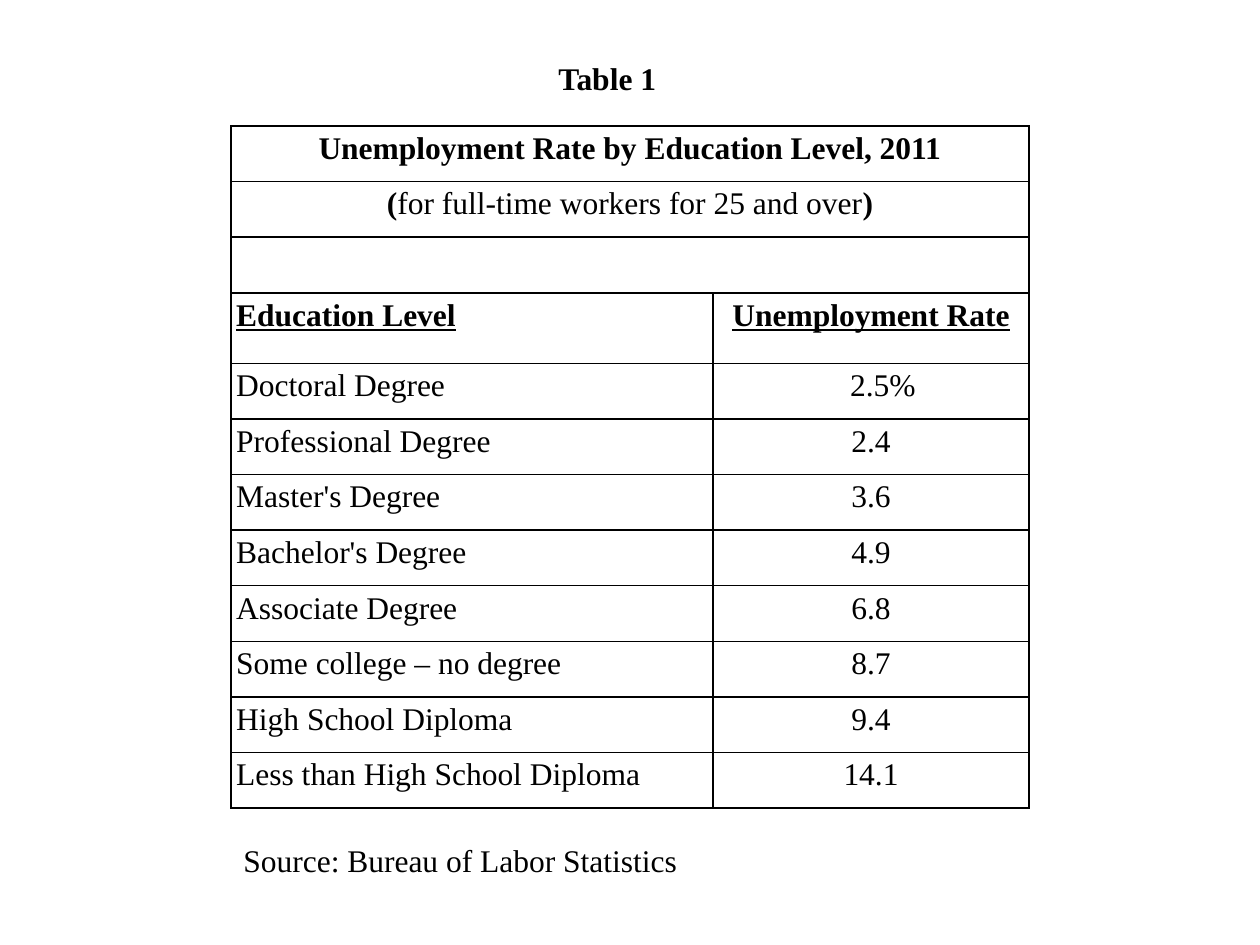
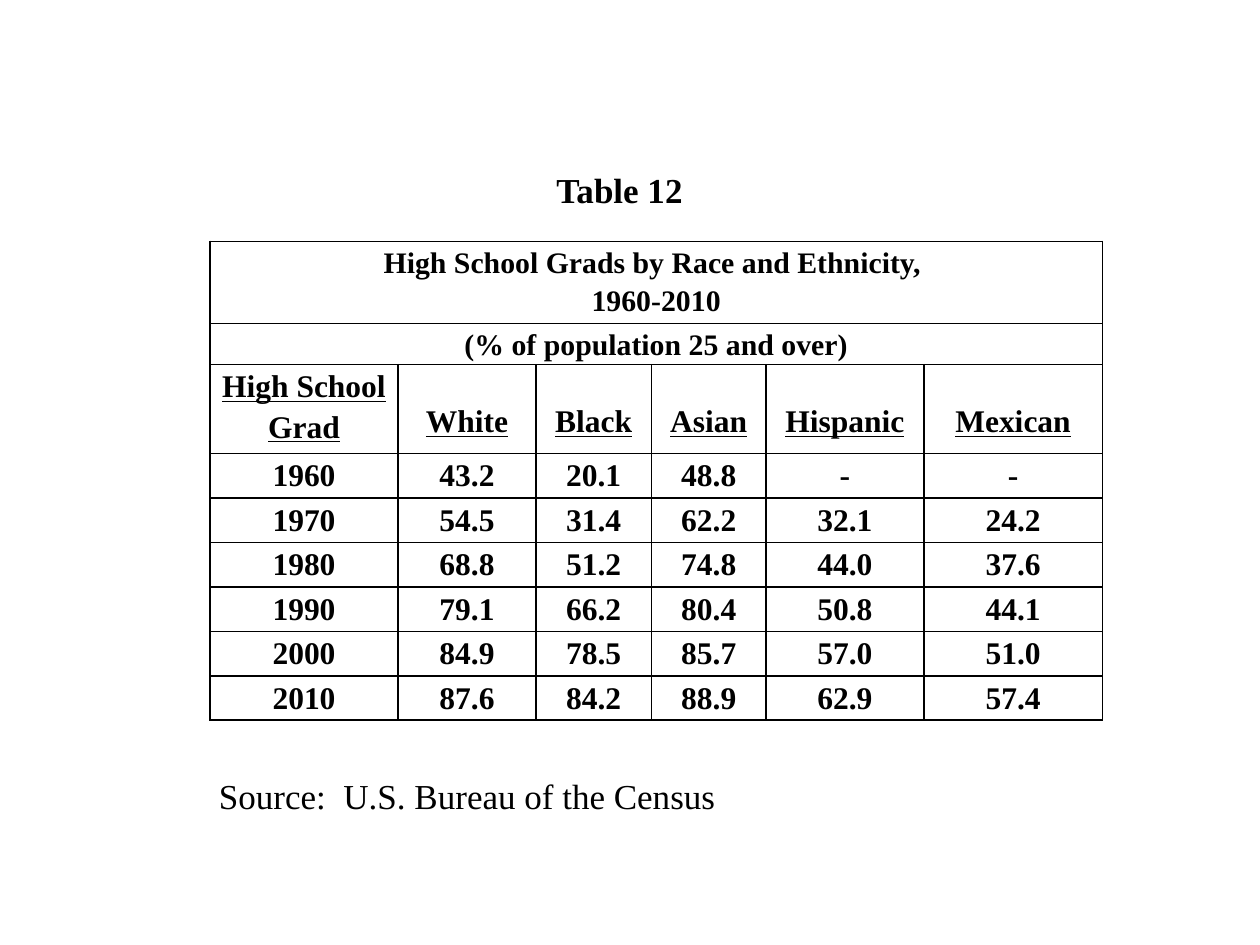
import pptx
import pptx.util
import pptx.dml.color
import pptx.enum.text
import pptx.oxml.ns
import lxml.etree

Pt = pptx.util.Pt
ALIGN = pptx.enum.text.PP_ALIGN
COLORS = {"text": "000000", "border": "000000"}
FONT = "Times New Roman"
BOLD = {"bold": True}
HEAD = {"bold": True, "underline": True}


class Deck:
    """Holds the shared style and the slide being built."""

    def __init__(self):
        self.prs = pptx.Presentation()
        self.prs.slide_width, self.prs.slide_height = Pt(720), Pt(540)
        self.s = None

    def slide(self):
        self.s = self.prs.slides.add_slide(self.prs.slide_layouts[6])

    def fill_text(self, tf, paragraphs, size, align=ALIGN.LEFT, spacing=None):
        """Each paragraph is a list of (text, format) runs."""
        for i, runs in enumerate(paragraphs):
            p = tf.add_paragraph() if i else tf.paragraphs[0]
            p.alignment = align
            p.line_spacing = spacing
            for text, fmt in runs:
                r = p.add_run()
                r.text = text
                r.font.color.rgb = pptx.dml.color.RGBColor.from_string(COLORS["text"])
                for name, value in {"name": FONT, "size": Pt(size), **fmt}.items():
                    setattr(r.font, name, value)

    def text(self, box, text, size, fmt=None, align=ALIGN.LEFT, wrap=True):
        tf = self.s.shapes.add_textbox(*map(Pt, box)).text_frame
        tf.word_wrap = wrap
        tf.auto_size = pptx.enum.text.MSO_AUTO_SIZE.SHAPE_TO_FIT_TEXT
        self.fill_text(tf, [[(text, fmt or {})]], size, align)

    def table(self, left, top, cols, rows, margin):
        """Adds an empty bordered grid with the given widths and heights."""
        frame = self.s.shapes.add_table(len(rows), len(cols), Pt(left), Pt(top),
                                        Pt(sum(cols)), Pt(sum(rows)))
        tbl = frame.table
        tbl.first_row = tbl.horz_banding = False
        for col, width in zip(tbl.columns, cols):
            col.width = Pt(width)
        for row, height in zip(tbl.rows, rows):
            row.height = Pt(height)
        for cell in tbl.iter_cells():
            cell.margin_left = cell.margin_right = Pt(margin)
            cell.margin_top = cell.margin_bottom = 0
            self.border(cell)
            cell.fill.background()
        return tbl

    def border(self, cell):
        qn = pptx.oxml.ns.qn
        tc_pr = cell._tc.get_or_add_tcPr()
        for side in ("lnL", "lnR", "lnT", "lnB"):
            ln = lxml.etree.SubElement(tc_pr, qn(f"a:{side}"), w=str(Pt(1)))
            fill = lxml.etree.SubElement(ln, qn("a:solidFill"))
            lxml.etree.SubElement(fill, qn("a:srgbClr"), val=COLORS["border"])

    def cell(self, cell, text, fmt=None, align=ALIGN.CENTER):
        self.fill_text(cell.text_frame, [[(text, fmt or {})]], 18, align, 1.15)

    def banner(self, tbl, row, paragraphs, size):
        """Merges a whole row and puts centred text in it."""
        first = tbl.cell(row, 0)
        first.merge(tbl.cell(row, len(tbl.columns) - 1))
        self.fill_text(first.text_frame, paragraphs, size, ALIGN.CENTER, 1.15)


def unemployment_slide(deck):
    rates = [
        ("Doctoral Degree", "2.5%"),
        ("Professional Degree", "2.4"),
        ("Master's Degree", "3.6"),
        ("Bachelor's Degree", "4.9"),
        ("Associate Degree", "6.8"),
        ("Some college – no degree", "8.7"),
        ("High School Diploma", "9.4"),
        ("Less than High School Diploma", "14.1"),
    ]
    deck.slide()

    # Table with three full-width rows on top
    heights = [31.8] * 3 + [40.3] + [31.8] * len(rates)
    tbl = deck.table(132, 72, [275.5, 180.5], heights, 3)
    deck.banner(tbl, 0, [[("Unemployment Rate by Education Level, 2011", BOLD)]], 18)
    deck.banner(tbl, 1, [[("(", BOLD), ("for full-time workers for 25 and over", {}),
                          (")", BOLD)]], 18)
    deck.banner(tbl, 2, [], 18)

    # Column heads and rates
    deck.cell(tbl.cell(3, 0), "Education Level", HEAD, ALIGN.LEFT)
    deck.cell(tbl.cell(3, 1), "Unemployment Rate", HEAD)
    for row, (level, rate) in enumerate(rates, 4):
        deck.cell(tbl.cell(row, 0), level, align=ALIGN.LEFT)
        deck.cell(tbl.cell(row, 1), rate)
    tbl.cell(4, 1).margin_left = Pt(16.5)  # lines the digits up despite the % sign

    # Title and source
    deck.text((312, 30, 71, 29), "Table 1", 18, BOLD, wrap=False)
    deck.text((132, 477, 265, 29), "Source: Bureau of Labor Statistics", 18, wrap=False)


def graduates_slide(deck):
    heads = ["High School Grad", "White", "Black", "Asian", "Hispanic", "Mexican"]
    grads = [
        ("1960", "43.2", "20.1", "48.8", "-", "-"),
        ("1970", "54.5", "31.4", "62.2", "32.1", "24.2"),
        ("1980", "68.8", "51.2", "74.8", "44.0", "37.6"),
        ("1990", "79.1", "66.2", "80.4", "50.8", "44.1"),
        ("2000", "84.9", "78.5", "85.7", "57.0", "51.0"),
        ("2010", "87.6", "84.2", "88.9", "62.9", "57.4"),
    ]
    deck.slide()

    # Table with two full-width rows on top
    heights = [46.8, 23.4, 50.8] + [25.4] * len(grads)
    tbl = deck.table(120, 138, [107.5, 78.8, 66, 65.5, 90.2, 102], heights, 5)
    deck.banner(tbl, 0, [[("High School Grads by Race and Ethnicity, ", BOLD)],
                         [("1960-2010", BOLD)]], 17)
    deck.banner(tbl, 1, [[("(% of population 25 and over)", BOLD)]], 17)

    # Column heads: the one-line heads sit on the second line
    for col, head in enumerate(heads):
        cell = tbl.cell(2, col)
        deck.cell(cell, head, HEAD)
        if col:
            cell.margin_top = Pt(20)

    # Shares by year
    for row, values in enumerate(grads, 3):
        for col, value in enumerate(values):
            deck.cell(tbl.cell(row, col), value, BOLD)

    # Title and source
    deck.text((0, 93, 708, 31.5), "Table 12", 20, BOLD, ALIGN.CENTER)
    deck.text((118, 439, 602, 31.5), "Source:  U.S. Bureau of the Census", 20)


def main():
    deck = Deck()
    unemployment_slide(deck)
    graduates_slide(deck)
    deck.prs.save("out.pptx")


if __name__ == "__main__":
    main()
